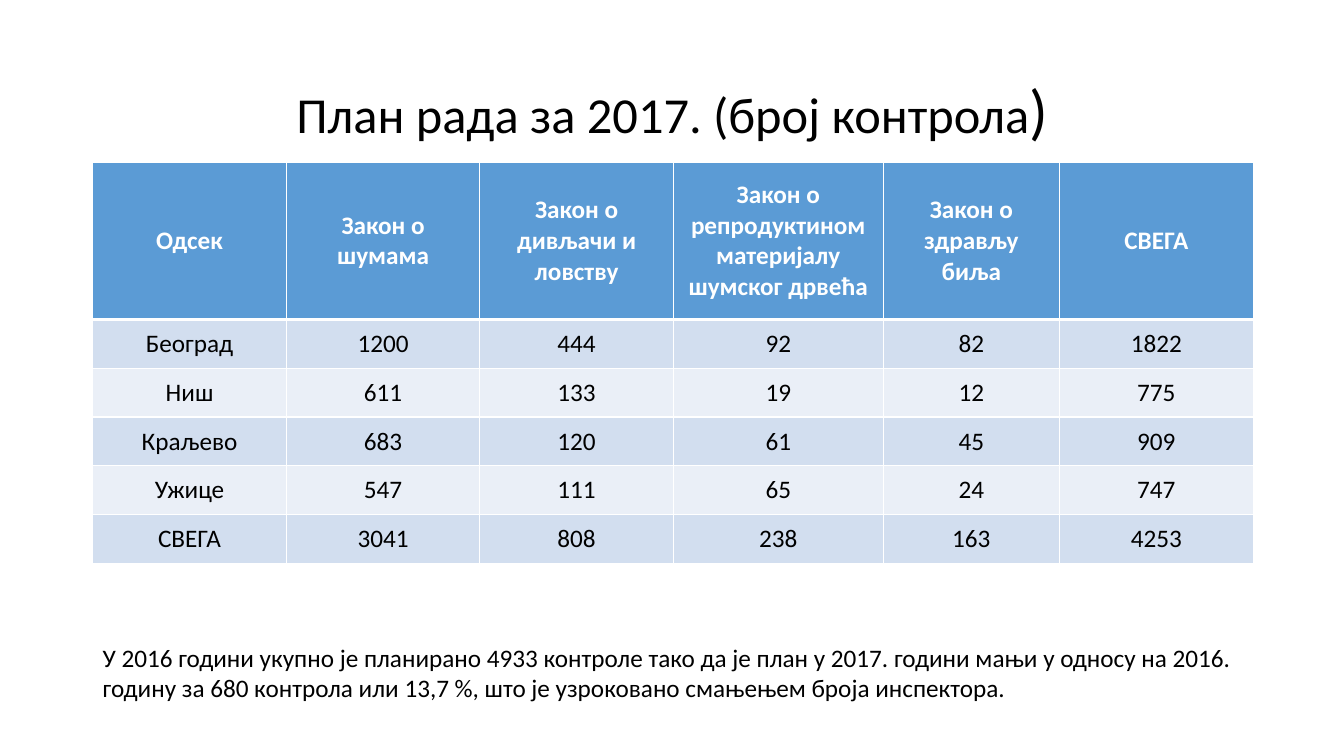
from dataclasses import dataclass

from lxml import etree
from pptx import Presentation
from pptx.dml.color import RGBColor
from pptx.enum.text import MSO_ANCHOR, PP_ALIGN
from pptx.oxml.ns import qn
from pptx.slide import Slide
from pptx.table import _Cell
from pptx.text.text import TextFrame
from pptx.util import Inches, Pt

LEFT, CENTER = PP_ALIGN.LEFT, PP_ALIGN.CENTER
TOP, MIDDLE = MSO_ANCHOR.TOP, MSO_ANCHOR.MIDDLE

BLACK = RGBColor(0x00, 0x00, 0x00)
WHITE = RGBColor(0xFF, 0xFF, 0xFF)
HEADER_BLUE = RGBColor(0x5B, 0x9B, 0xD5)
BAND_DARK = RGBColor(0xD2, 0xDE, 0xEF)
BAND_LIGHT = RGBColor(0xEA, 0xEF, 0xF7)

FONT = "Calibri"
MARGIN, CONTENT_WIDTH = 0.92, 11.5
TABLE_TOP, TABLE_HEIGHT, HEADER_HEIGHT = 1.61, 3.98, 1.56
COLUMN_WIDTHS = [1.92, 1.92, 1.92, 2.08, 1.75, 1.92]
THIN, THICK = 1, 3

HEADERS = ["Одсек", "Закон о шумама", "Закон о дивљачи и ловству",
           "Закон о репродуктином материјалу шумског дрвећа",
           "Закон о здрављу биља", "СВЕГА"]
INSPECTIONS = [
    ["Београд", 1200, 444, 92, 82, 1822],
    ["Ниш", 611, 133, 19, 12, 775],
    ["Краљево", 683, 120, 61, 45, 909],
    ["Ужице", 547, 111, 65, 24, 747],
    ["СВЕГА", 3041, 808, 238, 163, 4253],
]


@dataclass
class RowStyle:
    fill: RGBColor
    color: RGBColor = BLACK
    bold: bool = False
    top_border: int = THIN
    bottom_border: int = THIN


ROW_STYLES = [
    RowStyle(HEADER_BLUE, WHITE, True, bottom_border=THICK),
    RowStyle(BAND_DARK, top_border=THICK),
    RowStyle(BAND_LIGHT),
    RowStyle(BAND_DARK),
    RowStyle(BAND_LIGHT),
    RowStyle(BAND_DARK),
]


def write_text(frame: TextFrame, text: str, *, size: int = 18,
               color: RGBColor = BLACK, bold: bool = False,
               align: PP_ALIGN = LEFT, line_spacing: float = 1.0) -> None:
    """Append a formatted run to the first paragraph."""
    paragraph = frame.paragraphs[0]
    paragraph.alignment = align
    paragraph.line_spacing = line_spacing
    run = paragraph.add_run()
    run.text = text
    run.font.name = FONT
    run.font.size = Pt(size)
    run.font.bold = bold
    run.font.color.rgb = color


def add_text_frame(slide: Slide, top: float, height: float,
                   anchor: MSO_ANCHOR) -> TextFrame:
    box = slide.shapes.add_textbox(Inches(MARGIN), Inches(top),
                                   Inches(CONTENT_WIDTH), Inches(height))
    box.text_frame.word_wrap = True
    box.text_frame.vertical_anchor = anchor
    return box.text_frame


def set_borders(cell: _Cell, top: int, bottom: int) -> None:
    properties = cell._tc.get_or_add_tcPr()
    for side, width in (("L", THIN), ("R", THIN), ("T", top), ("B", bottom)):
        line = etree.SubElement(properties, qn(f"a:ln{side}"), w=str(Pt(width)))
        fill = etree.SubElement(line, qn("a:solidFill"))
        etree.SubElement(fill, qn("a:srgbClr"), val=str(WHITE))


def add_inspection_table(slide: Slide) -> None:
    rows = [HEADERS, *INSPECTIONS]
    table = slide.shapes.add_table(
        len(rows), len(HEADERS), Inches(MARGIN), Inches(TABLE_TOP),
        Inches(CONTENT_WIDTH), Inches(TABLE_HEIGHT)).table
    for column, width in zip(table.columns, COLUMN_WIDTHS):
        column.width = Inches(width)
    body_height = (TABLE_HEIGHT - HEADER_HEIGHT) / len(INSPECTIONS)
    heights = [HEADER_HEIGHT] + [body_height] * len(INSPECTIONS)

    for row, height, values, style in zip(table.rows, heights, rows, ROW_STYLES):
        row.height = Inches(height)
        for cell, value in zip(row.cells, values):
            set_borders(cell, style.top_border, style.bottom_border)
            cell.fill.solid()
            cell.fill.fore_color.rgb = style.fill
            cell.vertical_anchor = MIDDLE
            write_text(cell.text_frame, str(value), color=style.color,
                       bold=style.bold, align=CENTER)


def main() -> None:
    presentation = Presentation()
    presentation.slide_width = Inches(13.33)
    presentation.slide_height = Inches(7.5)
    slide = presentation.slides.add_slide(presentation.slide_layouts[6])

    # Title with a larger closing bracket
    title = add_text_frame(slide, 0.4, 1.45, MIDDLE)
    for text, size in (("План рада за 2017. (број контрола", 36), (")", 44)):
        write_text(title, text, size=size, align=CENTER, line_spacing=0.9)

    # Planned inspections by department and law
    add_inspection_table(slide)

    # Comparison with the previous year
    note = add_text_frame(slide, 6.32, 0.71, TOP)
    write_text(note, "У 2016 години укупно је планирано 4933 контроле тако да је "
                     "план у 2017. години мањи у односу на 2016. годину за 680 "
                     "контрола или 13,7 %, што је узроковано смањењем броја "
                     "инспектора.")

    presentation.save("out.pptx")


if __name__ == "__main__":
    main()
